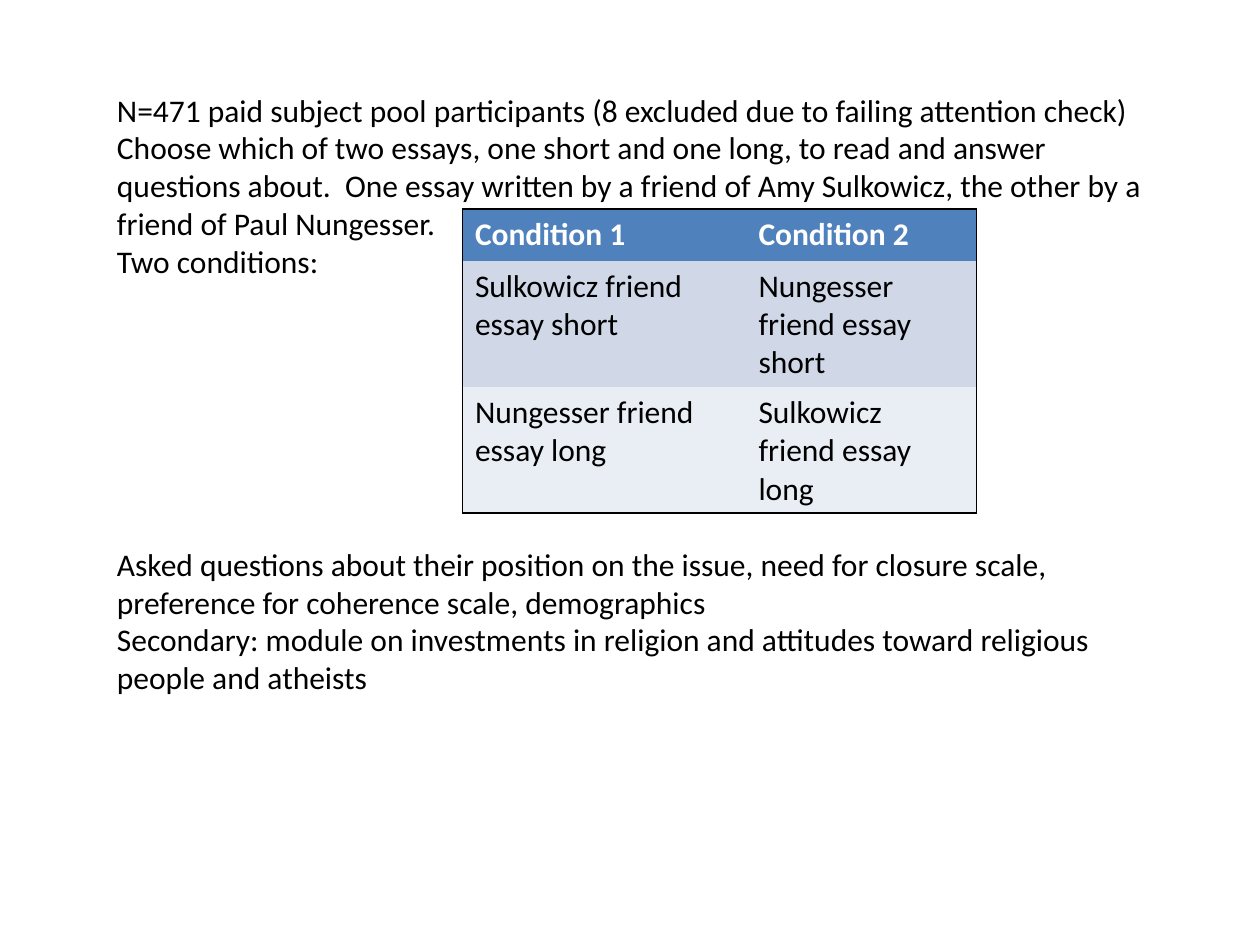
import dataclasses

import pptx
import pptx.dml.color
import pptx.enum.text
import pptx.oxml
import pptx.oxml.ns
import pptx.util

Inches = pptx.util.Inches
FONT, SIZE = "Calibri", 18
BLACK, WHITE = "000000", "FFFFFF"
NO_STYLE = "{2D5ABB26-0587-4C30-8999-92F81FD0307C}"


@dataclasses.dataclass
class Para:
    text: str
    before: float = 0


@dataclasses.dataclass
class Row:
    height: float
    fill: str
    texts: tuple[str, ...]
    color: str = BLACK
    bold: bool = False


PARAS = [
    Para("N=471 paid subject pool participants (8 excluded due to failing attention check)"),
    Para("Choose which of two essays, one short and one long, to read and answer "
         "questions about.  One essay written by a friend of Amy Sulkowicz, "
         "the other by a friend of Paul Nungesser."),
    Para("Two conditions:"),
    # The space above leaves room for the table
    Para("Asked questions about their position on the issue, need for closure scale, "
         "preference for coherence scale, demographics", before=151.5),
    Para("Secondary: module on investments in religion and attitudes toward "
         "religious people and atheists"),
]
COL_WIDTHS = [2.25, 1.83]
ROWS = [
    Row(0.41, "4F81BD", ("Condition 1", "Condition 2"), WHITE, True),
    Row(1, "D0D8E8", ("Sulkowicz friend essay short", "Nungesser friend essay short")),
    Row(1, "E9EDF4", ("Nungesser friend essay long", "Sulkowicz friend essay long")),
]


def rgb(color: str) -> pptx.dml.color.RGBColor:
    return pptx.dml.color.RGBColor.from_string(color)


def add_run(p, text: str, color: str = BLACK, bold: bool = False) -> None:
    r = p.add_run()
    r.text = text
    r.font.name, r.font.size = FONT, pptx.util.Pt(SIZE)
    r.font.bold = bold
    r.font.color.rgb = rgb(color)


def add_border(cell, side: str) -> None:
    ns = pptx.oxml.ns.nsdecls("a")
    cell._tc.get_or_add_tcPr().append(pptx.oxml.parse_xml(
        f'<a:ln{side} {ns} w="12700"><a:solidFill><a:srgbClr val="{BLACK}"/>'
        f'</a:solidFill></a:ln{side}>'))


def add_body(s, paras: list[Para]) -> None:
    sp = s.shapes.add_textbox(Inches(0.83), Inches(0.67), Inches(8.42), Inches(4.95))
    tf = sp.text_frame
    tf.word_wrap = True
    tf.auto_size = pptx.enum.text.MSO_AUTO_SIZE.SHAPE_TO_FIT_TEXT
    for i, para in enumerate(paras):
        p = tf.add_paragraph() if i else tf.paragraphs[0]
        p.space_before = pptx.util.Pt(para.before)
        add_run(p, para.text)


def add_conditions(s, rows: list[Row], widths: list[float]) -> None:
    frame = s.shapes.add_table(
        len(rows), len(widths), Inches(3.67), Inches(1.66),
        Inches(sum(widths)), Inches(sum(row.height for row in rows)))
    table = frame.table
    table.horz_banding = False
    table._tbl.tblPr.find(pptx.oxml.ns.qn("a:tableStyleId")).text = NO_STYLE
    for j, width in enumerate(widths):
        table.columns[j].width = Inches(width)
    for i, row in enumerate(rows):
        table.rows[i].height = Inches(row.height)
        for j, text in enumerate(row.texts):
            cell = table.cell(i, j)
            # Only the outer edges carry a line
            edges = {"L": j == 0, "R": j == len(widths) - 1,
                     "T": i == 0, "B": i == len(rows) - 1}
            for side, outer in edges.items():
                if outer:
                    add_border(cell, side)
            cell.fill.solid()
            cell.fill.fore_color.rgb = rgb(row.fill)
            add_run(cell.text_frame.paragraphs[0], text, row.color, row.bold)


def main() -> None:
    prs = pptx.Presentation()
    prs.slide_width, prs.slide_height = Inches(10), Inches(7.5)
    s = prs.slides.add_slide(prs.slide_layouts[6])
    # Study description
    add_body(s, PARAS)
    # Table of conditions
    add_conditions(s, ROWS, COL_WIDTHS)
    prs.save("out.pptx")


if __name__ == "__main__":
    main()
